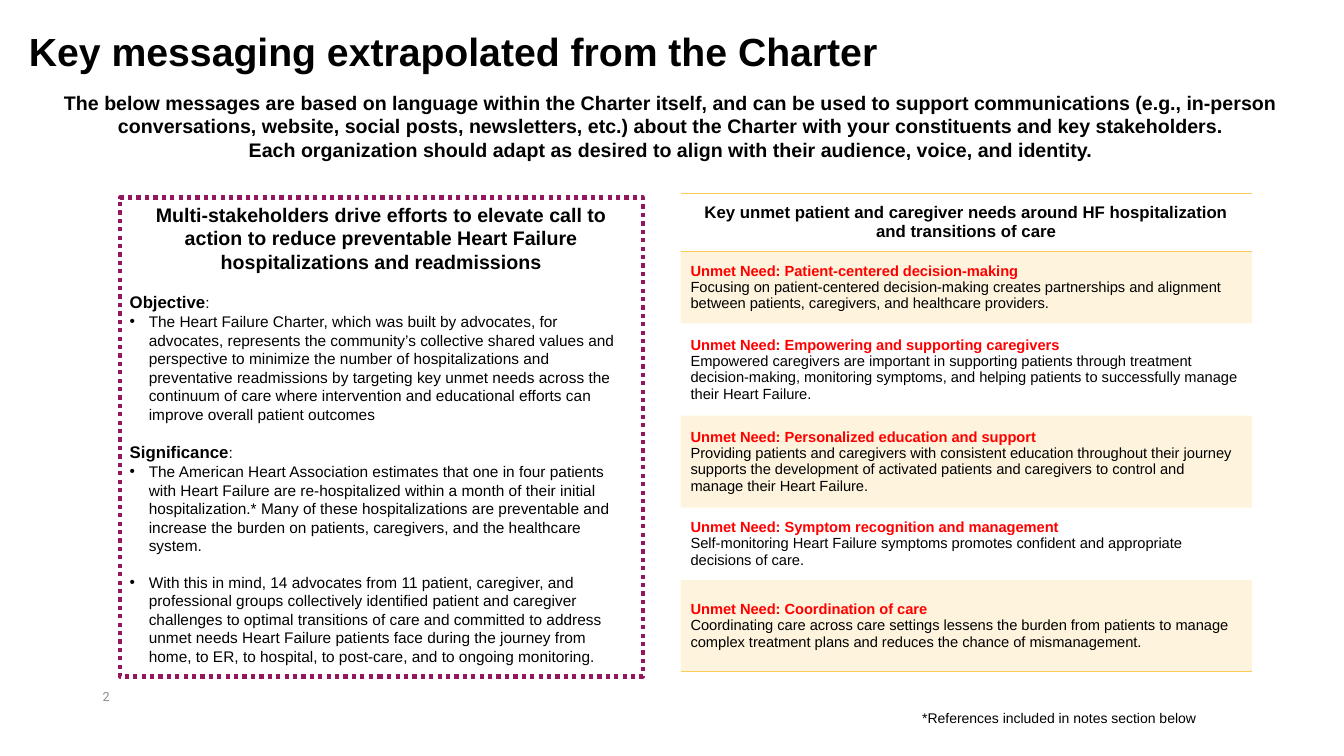
from pptx import Presentation
from pptx.dml.color import RGBColor
from pptx.enum.dml import MSO_LINE
from pptx.enum.shapes import MSO_SHAPE
from pptx.enum.text import MSO_ANCHOR, PP_ALIGN
from pptx.oxml import parse_xml
from pptx.oxml.ns import nsdecls, qn
from pptx.util import Cm, Pt
from lxml.etree import SubElement

# Content
TITLE = "Key messaging extrapolated from the Charter"
INTRO = [
    "The below messages are based on language within the Charter itself, and can be used to support communications (e.g., in-person conversations, website, social posts, newsletters, etc.) about the Charter with your constituents and key stakeholders.",
    "Each organization should adapt as desired to align with their audience, voice, and identity.",
]
CALL = "Multi-stakeholders drive efforts to elevate call to action to reduce preventable Heart Failure hospitalizations and readmissions"
PARTS = [
    ("Objective", [
        "The Heart Failure Charter, which was built by advocates, for advocates, represents the community’s collective shared values and perspective to minimize the number of hospitalizations and preventative readmissions by targeting key unmet needs across the continuum of care where intervention and educational efforts can improve overall patient outcomes",
    ]),
    ("Significance", [
        "The American Heart Association estimates that one in four patients with Heart Failure are re-hospitalized within a month of their initial hospitalization.* Many of these hospitalizations are preventable and increase the burden on patients, caregivers, and the healthcare system.",
        "With this in mind, 14 advocates from 11 patient, caregiver, and professional groups collectively identified patient and caregiver challenges to optimal transitions of care and committed to address unmet needs Heart Failure patients face during the journey from home, to ER, to hospital, to post-care, and to ongoing monitoring.",
    ]),
]
HEAD = "Key unmet patient and caregiver needs around HF hospitalization and transitions of care"
NEEDS = [  # need, message, row height in cm
    ("Patient-centered decision-making", "Focusing on patient-centered decision-making creates partnerships and alignment between patients, caregivers, and healthcare providers.", 1.82),
    ("Empowering and supporting caregivers", "Empowered caregivers are important in supporting patients through treatment decision-making, monitoring symptoms, and helping patients to successfully manage their Heart Failure.", 2.32),
    ("Personalized education and support", "Providing patients and caregivers with consistent education throughout their journey supports the development of activated patients and caregivers to control and manage their Heart Failure.", 2.32),
    ("Symptom recognition and management", "Self-monitoring Heart Failure symptoms promotes confident and appropriate decisions of care.", 1.82),
    ("Coordination of care", "Coordinating care across care settings lessens the burden from patients to manage complex treatment plans and reduces the chance of mismanagement.", 2.32),
]
NOTE = "*References included in notes section below"
COLORS = {"text": "000000", "need": "FF0000", "gold": "FBCC57",
          "plum": "94165D", "page": "8C8C8C"}
NO_STYLE = "{2D5ABB26-0587-4C30-8999-92F81FD0307C}"


def add_run(para, text, size, bold=False, color="text", font="Arial"):
    run = para.add_run()
    run.text = text
    run.font.size, run.font.bold, run.font.name = Pt(size), bold, font
    run.font.color.rgb = RGBColor.from_string(COLORS[color])


def next_para(frame, align=PP_ALIGN.LEFT, gap=0):
    first = frame.paragraphs[0]
    para = frame.add_paragraph() if first.runs else first
    para.alignment = align
    if gap:
        para.space_before = Pt(gap)
    return para


def add_text(area, anchor=MSO_ANCHOR.TOP, wrap=True):
    frame = slide.shapes.add_textbox(*map(Cm, area)).text_frame
    frame.word_wrap, frame.vertical_anchor = wrap, anchor
    return frame


def add_bullet(para):
    props = para._p.get_or_add_pPr()
    props.set("marL", str(Cm(0.48)))
    props.set("indent", str(Cm(-0.48)))
    SubElement(props, qn("a:buFont")).set("typeface", "Arial")
    SubElement(props, qn("a:buChar")).set("char", "•")


def add_edges(cell, sides):
    props = cell._tc.get_or_add_tcPr()
    for i, side in enumerate(sides):
        props.insert(i, parse_xml(
            f'<a:ln{side} {nsdecls("a")} w="{Pt(1)}"><a:solidFill>'
            f'<a:srgbClr val="{COLORS["gold"]}"/></a:solidFill></a:ln{side}>'))


def tint(cell):
    cell.fill.solid()
    cell.fill.fore_color.rgb = RGBColor.from_string(COLORS["gold"])
    shade = cell._tc.tcPr.find(qn("a:solidFill"))[0]
    SubElement(shade, qn("a:alpha")).set("val", "20000")


deck = Presentation()
deck.slide_width, deck.slide_height = Cm(33.87), Cm(19.05)
slide = deck.slides.add_slide(deck.slide_layouts[6])

# Title, page number and note
para = next_para(add_text((0.48, 0.76, 29.21, 1.19), MSO_ANCHOR.MIDDLE))
para.line_spacing = 0.9
add_run(para, TITLE, 28, True)
page = add_text((2.34, 17.17, 1.4, 0.69), MSO_ANCHOR.BOTTOM)
add_run(next_para(page), "2", 9, color="page", font="Roboto")
add_run(next_para(add_text((22.99, 17.75, 7.47, 0.69), wrap=False)), NOTE, 10)

# Table of unmet needs
heights = [1.45] + [need[2] for need in NEEDS]
table = slide.shapes.add_table(
    len(heights), 1, Cm(17.15), Cm(4.88), Cm(14.4), Cm(sum(heights))).table
table.first_row = table.horz_banding = False
table._tbl.tblPr.find(qn("a:tableStyleId")).text = NO_STYLE
for i, height in enumerate(heights):
    table.rows[i].height = Cm(height)
    cell = table.cell(i, 0)
    cell.vertical_anchor = MSO_ANCHOR.MIDDLE
    frame = cell.text_frame
    if i == 0:
        add_run(next_para(frame, PP_ALIGN.CENTER), HEAD, 12, True)
    else:
        need, message, _ = NEEDS[i - 1]
        add_run(next_para(frame), f"Unmet Need: {need}", 10.5, True, "need")
        add_run(next_para(frame), message, 10.5)
    if i % 2:
        tint(cell)
    else:
        cell.fill.background()
add_edges(table.cell(0, 0), "TB")
add_edges(table.cell(len(NEEDS), 0), "B")

# Dotted box with objective and significance
box = slide.shapes.add_shape(
    MSO_SHAPE.RECTANGLE, Cm(3.02), Cm(4.98), Cm(13.18), Cm(12.07))
box.shadow.inherit = False
box.fill.background()
box.line.color.rgb = RGBColor.from_string(COLORS["plum"])
box.line.width, box.line.dash_style = Pt(3), MSO_LINE.ROUND_DOT
frame = box.text_frame
frame.word_wrap, frame.vertical_anchor = True, MSO_ANCHOR.TOP
add_run(next_para(frame, PP_ALIGN.CENTER), CALL, 14, True)
for name, points in PARTS:
    para = next_para(frame, gap=13.5)
    add_run(para, name, 12, True)
    add_run(para, ":", 11)
    for i, point in enumerate(points):
        para = next_para(frame, gap=13 if i else 0)
        add_bullet(para)
        add_run(para, point, 11)

# Introduction
frame = add_text((0.48, 2.16, 32.87, 2.06))
for line in INTRO:
    add_run(next_para(frame, PP_ALIGN.CENTER), line, 14, True)

deck.save("out.pptx")
